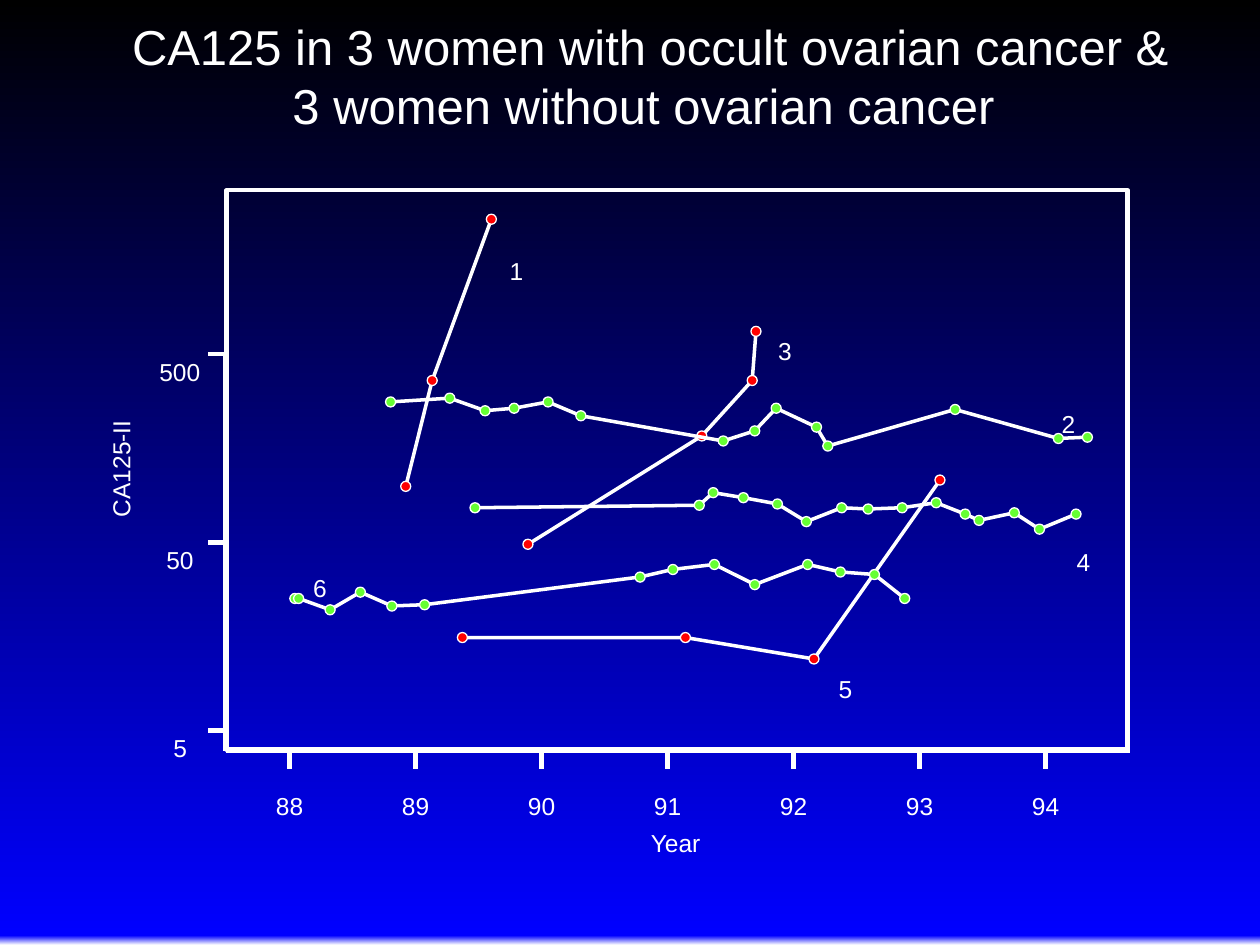
from copy import deepcopy

from lxml import etree
from pptx import Presentation
from pptx import util as u
from pptx.dml.color import RGBColor
from pptx.enum import shapes, text
from pptx.oxml.ns import qn

WHITE = RGBColor(0xFF, 0xFF, 0xFF)
BLUE = RGBColor(0x00, 0x00, 0xFF)
BLACK = RGBColor(0x00, 0x00, 0x00)
RED = RGBColor(0xFF, 0x00, 0x00)
GREEN = RGBColor(0x66, 0xFF, 0x33)

# Content; positions are in inches on the slide
TITLE = "CA125 in 3 women with occult ovarian cancer & 3 women without ovarian cancer "
BACKDROP = [(0, WHITE), (0.01, BLUE), (1, BLACK)]
YEARS = ["88", "89", "90", "91", "92", "93", "94"]
LEVELS = ["500", "50", "5"]
# Per woman: marker colour, measured points
SERIES = [
    (RED, [(4.19, 4.32), (5.57, 3.46), (5.97, 3.02), (6, 2.63)]),
    (RED, [(3.67, 5.06), (5.44, 5.06), (6.46, 5.23), (7.46, 3.81)]),
    (RED, [(3.22, 3.86), (3.43, 3.02), (3.9, 1.74)]),
    (GREEN, [(2.34, 4.75), (2.37, 4.75), (2.62, 4.84), (2.86, 4.7), (3.11, 4.81),
             (3.37, 4.8), (5.08, 4.58), (5.34, 4.52), (5.67, 4.48), (5.99, 4.64),
             (6.41, 4.48), (6.67, 4.54), (6.94, 4.56), (7.18, 4.75)]),
    (GREEN, [(3.77, 4.03), (5.55, 4.01), (5.66, 3.91), (5.9, 3.95), (6.17, 4),
             (6.4, 4.14), (6.68, 4.03), (6.89, 4.04), (7.16, 4.03), (7.43, 3.99),
             (7.66, 4.08), (7.77, 4.13), (8.05, 4.07), (8.25, 4.2), (8.54, 4.08)]),
    (GREEN, [(3.1, 3.19), (3.57, 3.16), (3.85, 3.26), (4.08, 3.24), (4.35, 3.19),
             (4.61, 3.3), (5.74, 3.5), (5.99, 3.42), (6.16, 3.24), (6.48, 3.39),
             (6.57, 3.54), (7.58, 3.25), (8.4, 3.48), (8.63, 3.47)]),
]
# Woman number: label centre and top
NUMBERS = {"1": (4.1, 2.03), "2": (8.48, 3.25), "3": (6.23, 2.67),
           "4": (8.6, 4.34), "5": (6.71, 5.35), "6": (2.54, 4.55)}

# Layout
AXIS_X, AXIS_Y, AXIS_RIGHT = 1.79, 5.96, 8.97
TICK = 0.14
YEAR_START, YEAR_STEP = 2.3, 1
LEVEL_TOP, LEVEL_STEP = 2.81, 1.495
DIGIT, LABEL_HEIGHT = 0.11, 0.24
MARKER = 0.08


def inch(value):
    return u.Cm(value * 2.54)


def add_text(page, words, left, top, width, height, size=14, wrap=False):
    box = page.shapes.add_textbox(*map(inch, (left, top, width, height)))
    frame = box.text_frame
    frame.margin_left = frame.margin_right = frame.margin_top = frame.margin_bottom = 0
    frame.word_wrap = wrap
    frame.auto_size = text.MSO_AUTO_SIZE.SHAPE_TO_FIT_TEXT
    para = frame.paragraphs[0]
    para.text = words
    para.font.name = "Arial"
    para.font.size = u.Pt(size)
    para.font.color.rgb = WHITE
    return box


def add_label(page, words, center, top, width=None):
    width = width or DIGIT * len(words)
    return add_text(page, words, center - width / 2, top, width, LABEL_HEIGHT)


def set_line(shape, width):
    shape.line.color.rgb = WHITE
    shape.line.width = u.Pt(width)


def add_line(page, x1, y1, x2, y2):
    line = page.shapes.add_connector(
        shapes.MSO_CONNECTOR.STRAIGHT, *map(inch, (x1, y1, x2, y2)))
    set_line(line, 2.63)
    etree.SubElement(line._element.spPr, qn("a:effectLst"))


def add_series(page, color, points):
    corners = [(inch(x), inch(y)) for x, y in points]
    builder = page.shapes.build_freeform(*corners[0])
    builder.add_line_segments(corners[1:], close=False)
    curve = builder.convert_to_shape()
    curve.shadow.inherit = False
    curve.fill.background()
    set_line(curve, 2)
    for x, y in points:
        dot = page.shapes.add_shape(
            shapes.MSO_SHAPE.OVAL, inch(x - MARKER / 2), inch(y - MARKER / 2),
            inch(MARKER), inch(MARKER))
        dot.shadow.inherit = False
        dot.fill.solid()
        dot.fill.fore_color.rgb = color
        set_line(dot, 0)


def set_backdrop(page):
    fill = page.background.fill
    fill.gradient()
    fill.gradient_angle = 90
    stops = page._element.find(".//" + qn("a:gsLst"))
    stops.append(deepcopy(stops[0]))
    for stop, (position, color) in zip(fill.gradient_stops, BACKDROP):
        stop.position = position
        stop.color.rgb = color


def main():
    deck = Presentation()
    deck.slide_width, deck.slide_height = inch(10), inch(7.5)
    page = deck.slides.add_slide(deck.slide_layouts[6])
    set_backdrop(page)

    # Year axis
    add_label(page, "Year", 5.37, 6.57, 0.41)
    add_line(page, AXIS_X, AXIS_Y, AXIS_RIGHT, AXIS_Y)
    for i, year in enumerate(YEARS):
        x = YEAR_START + i * YEAR_STEP
        add_line(page, x, AXIS_Y, x, AXIS_Y + TICK)
        add_label(page, year, x, 6.28)

    # Concentration axis
    add_label(page, "CA125-II", 0.96, 3.6, 0.77).rotation = 270
    add_line(page, AXIS_X, AXIS_Y, AXIS_X, LEVEL_TOP)
    for i, level in enumerate(LEVELS):
        y = LEVEL_TOP + i * LEVEL_STEP
        add_line(page, AXIS_X, y, AXIS_X - TICK, y)
        add_label(page, level, 1.43, y + 0.02)

    # Plot frame
    frame = page.shapes.add_shape(
        shapes.MSO_SHAPE.RECTANGLE, *map(inch, (1.8, 1.51, 7.15, 4.44)))
    frame.shadow.inherit = False
    frame.fill.background()
    set_line(frame, 2.63)

    # Curves with markers
    for color, points in SERIES:
        add_series(page, color, points)

    # Title and curve numbers
    title = add_text(page, TITLE, 0.91, 0.13, 8.5, 0.94, size=28, wrap=True)
    title.text_frame.paragraphs[0].alignment = text.PP_ALIGN.CENTER
    for number, (center, top) in NUMBERS.items():
        add_label(page, number, center, top)

    deck.save("out.pptx")


if __name__ == "__main__":
    main()
